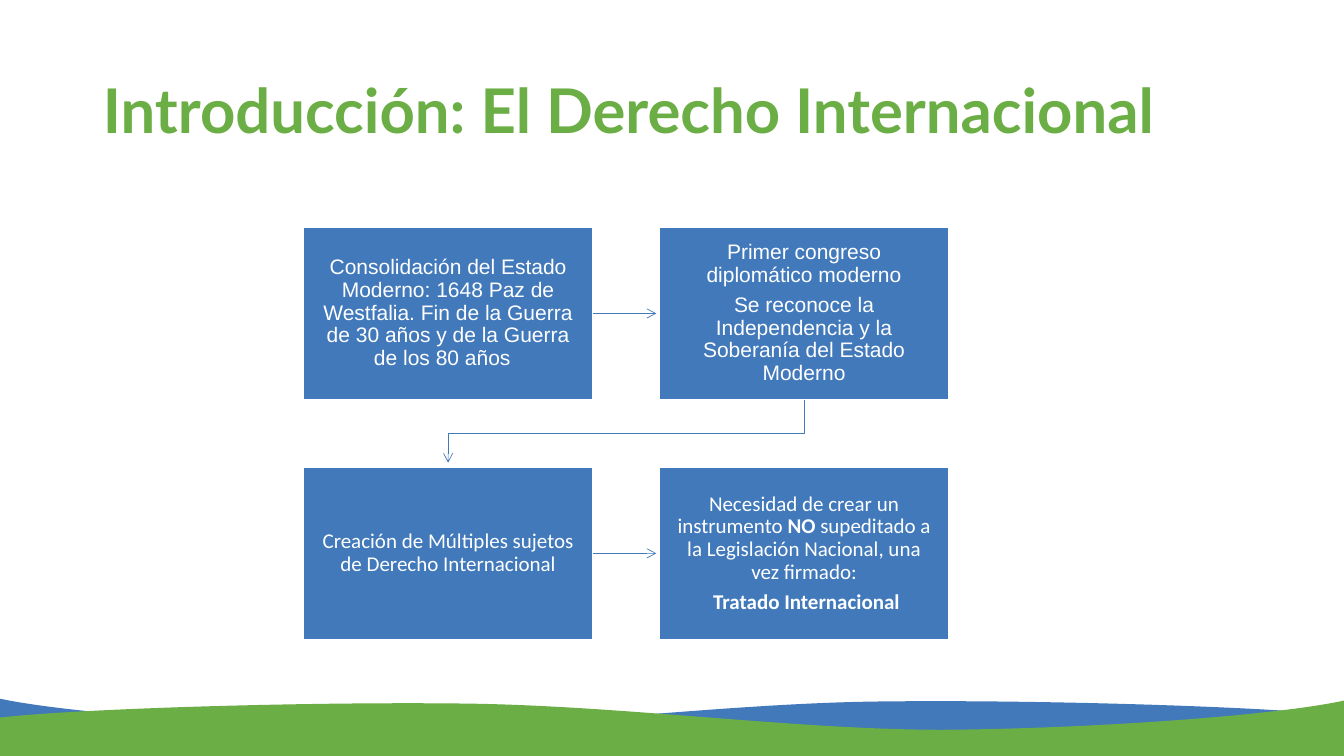
from lxml.etree import SubElement
from pptx import Presentation
from pptx.dml.color import RGBColor
from pptx.enum.shapes import MSO_CONNECTOR as Connector, MSO_SHAPE as Shape
from pptx.enum.text import MSO_ANCHOR as Anchor, PP_ALIGN as Align
from pptx.oxml.ns import qn
from pptx.util import Inches, Pt

GREEN = RGBColor(0x6B, 0xAE, 0x45)
WAVE_BLUE = RGBColor(0x42, 0x79, 0xBB)
BLUE = RGBColor(0x41, 0x79, 0xBB)
WHITE = RGBColor(0xFF, 0xFF, 0xFF)

BOX_WIDTH, BOX_HEIGHT = 2.87, 1.72
LEFTS, TOPS = (3.01, 6.54), (2.25, 4.63)


def write_text(frame, paragraphs, *, font, size, color, align, bold=False, after=0):
    """Fill the frame; each paragraph is a list of (text, emphasised) pairs."""
    frame.word_wrap = True
    frame.vertical_anchor = Anchor.MIDDLE
    for index, spans in enumerate(paragraphs):
        para = frame.add_paragraph() if index else frame.paragraphs[0]
        para.alignment = align
        para.line_spacing = 0.9
        para.space_before = Pt(0)
        para.space_after = Pt(after)
        for text, emphasised in spans:
            span = para.add_run()
            span.text = text
            span.font.name = font
            span.font.size = Pt(size)
            span.font.bold = bold or emphasised
            span.font.color.rgb = color


def style_arrow(arrow):
    arrow.line.color.rgb = BLUE
    arrow.line.width = Pt(0.5)
    SubElement(arrow.line._get_or_add_ln(), qn("a:tailEnd"), type="arrow")
    properties = arrow._element.spPr
    if properties.find(qn("a:effectLst")) is None:
        SubElement(properties, qn("a:effectLst"))


deck = Presentation()
deck.slide_width, deck.slide_height = Inches(13.33), Inches(7.5)
page = deck.slides.add_slide(deck.slide_layouts[5])
shapes = page.shapes

# Footer waves: a start point, then two controls and an end for each curve
waves = [
    (WAVE_BLUE, (13.33, 7.1), [
        (12.56, 7.01), (10.26, 6.94), (8.7, 6.96),
        (7.15, 6.98), (5.43, 7.22), (3.98, 7.22),
        (2.53, 7.21), (0.68, 7.08), (-0.01, 6.93),
    ]),
    (GREEN, (-0.01, 7.12), [
        (0.76, 7.03), (3.06, 6.96), (4.62, 6.98),
        (6.18, 7), (7.89, 7.24), (9.35, 7.24),
        (10.8, 7.23), (12.65, 7.1), (13.33, 6.95),
    ]),
]
for color, start, curve_points in waves:
    corners = [(curve_points[-1][0], 7.5), (start[0], 7.5)]
    builder = shapes.build_freeform(Inches(start[0]), Inches(start[1]))
    builder.add_line_segments([(Inches(x), Inches(y)) for x, y in curve_points + corners])
    wave = builder.convert_to_shape()
    wave.shadow.inherit = False
    wave.fill.solid()
    wave.fill.fore_color.rgb = color
    wave.line.fill.background()
    # Join every three line segments of the curved edge into one cubic curve
    lines = list(wave._element.iter(qn("a:lnTo")))[:len(curve_points)]
    for first in range(0, len(lines), 3):
        outline = lines[first].getparent()
        curve = SubElement(outline, qn("a:cubicBezTo"))
        outline.replace(lines[first], curve)
        curve.append(lines[first][0])
        for line in lines[first + 1:first + 3]:
            curve.append(line[0])
            outline.remove(line)

title = shapes.title
title.left, title.top = Inches(0.92), Inches(0.4)
title.width, title.height = Inches(11.5), Inches(1.45)
write_text(title.text_frame, [[("Introducción: El Derecho Internacional", False)]],
           font="Lato", size=44, color=GREEN, align=Align.LEFT, bold=True)

# Steps in reading order, two to a row
steps = [
    ("Arial", [[("Consolidación del Estado Moderno: 1648 Paz de Westfalia. "
                 "Fin de la Guerra de 30 años y de la Guerra de los 80 años  ", False)]]),
    ("Arial", [[("Primer congreso diplomático moderno", False)],
               [("Se reconoce la Independencia y la Soberanía del Estado Moderno", False)]]),
    ("Calibri", [[("Creación de Múltiples sujetos de Derecho Internacional", False)]]),
    ("Calibri", [[("Necesidad de crear un instrumento ", False), ("NO", True),
                  (" supeditado a la Legislación Nacional, una vez firmado:", False)],
                 [(" ", False), ("Tratado Internacional", True)]]),
]
boxes = []
for index, (font, paragraphs) in enumerate(steps):
    row, column = divmod(index, 2)
    box = shapes.add_shape(Shape.RECTANGLE, Inches(LEFTS[column]), Inches(TOPS[row]),
                           Inches(BOX_WIDTH), Inches(BOX_HEIGHT))
    box.shadow.inherit = False
    box.fill.solid()
    box.fill.fore_color.rgb = BLUE
    box.line.color.rgb = WHITE
    box.line.width = Pt(1.5)
    frame = box.text_frame
    frame.margin_left = frame.margin_right = Inches(0.14)
    frame.margin_top = frame.margin_bottom = Inches(0.15)
    write_text(frame, paragraphs, font=font, size=15, color=WHITE,
               align=Align.CENTER, after=5.25)
    boxes.append(box)

for top, box in zip(TOPS, boxes[::2]):
    middle = Inches(top + BOX_HEIGHT / 2)
    arrow = shapes.add_connector(Connector.STRAIGHT, Inches(LEFTS[0] + BOX_WIDTH), middle,
                                 Inches(6.51), middle)
    arrow.begin_connect(box, 3)
    style_arrow(arrow)

# Bent arrow from the end of the first row to the start of the second
left_center, right_center = (Inches(left + BOX_WIDTH / 2) for left in LEFTS)
builder = shapes.build_freeform(right_center, Inches(TOPS[0] + BOX_HEIGHT))
builder.add_line_segments([(right_center, Inches(4.3)), (left_center, Inches(4.3)),
                           (left_center, Inches(4.59))], close=False)
bent_arrow = builder.convert_to_shape()
bent_arrow.fill.background()
style_arrow(bent_arrow)

deck.save("out.pptx")
